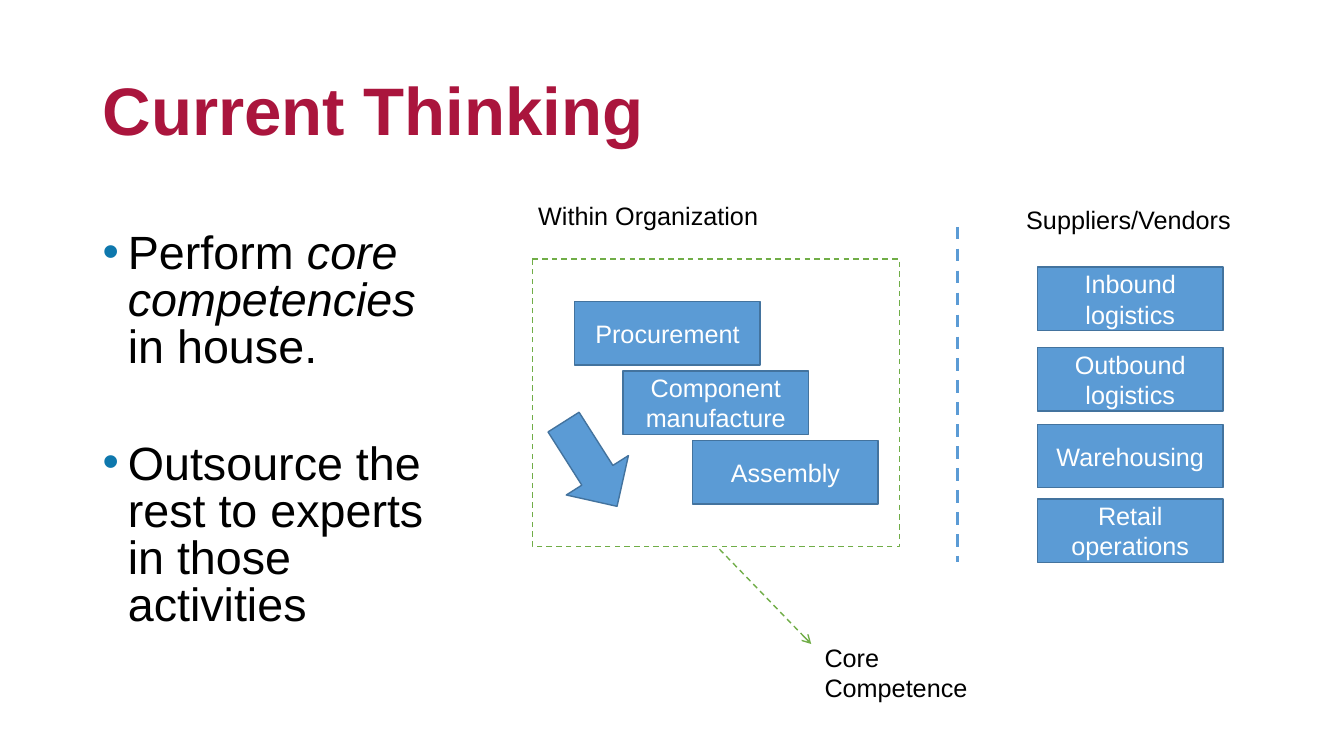
from lxml import etree
from pptx import Presentation
from pptx.dml.color import RGBColor
from pptx.enum.dml import MSO_LINE
from pptx.enum.shapes import MSO_CONNECTOR, MSO_SHAPE
from pptx.enum.text import MSO_ANCHOR, PP_ALIGN
from pptx.oxml.ns import qn
from pptx.util import Emu, Pt

RECT, DOWN_ARROW, CALLOUT = MSO_SHAPE.RECTANGLE, MSO_SHAPE.DOWN_ARROW, MSO_SHAPE.LINE_CALLOUT_1
STRAIGHT, DASH = MSO_CONNECTOR.STRAIGHT, MSO_LINE.DASH
MIDDLE, TOP = MSO_ANCHOR.MIDDLE, MSO_ANCHOR.TOP
CENTER, LEFT = PP_ALIGN.CENTER, PP_ALIGN.LEFT

# Content: lengths in px, 100 px to the inch
PX = 9144
FONT = "Arial"
BLUE, DARK_BLUE, GREEN = "5B9BD5", "43739E", "70AD47"
CRIMSON, BULLET_BLUE, BLACK, WHITE = "AA153D", "0E78AD", "000000", "FFFFFF"

TITLE = "Current Thinking"
POINTS = [  # each point is a list of (text, italic)
    [("Perform ", False), ("core competencies ", True), ("in house.", False)],
    [("Outsource the rest to experts in those activities", False)],
]
POINT_GAP = 50  # points of space between the two bullets
LABELS = [
    ("Within Organization", (524, 194, 284, 40)),
    ("Core Competence", (808, 632, 210, 71)),
    ("Suppliers/Vendors", (1008, 198, 230, 40)),
]
BOX_SIZE = (184, 63)
IN_HOUSE = [("Procurement", 570), ("Component manufacture", 618), ("Assembly", 687)]
IN_HOUSE_TOP, IN_HOUSE_STEP = 299, 69
SUPPLIERS = [("Inbound logistics", 265), ("Outbound logistics", 345),
             ("Warehousing", 421), ("Retail operations", 495)]
SUPPLIERS_LEFT = 1029


def px(*lengths):
    return [Emu(length * PX) for length in lengths]


def color(hex_string):
    return RGBColor.from_string(hex_string)


def style_font(paragraph, size, hex_string, bold=False):
    font = paragraph.font
    font.name, font.size, font.bold = FONT, Pt(size), bold
    font.color.rgb = color(hex_string)


def style_line(line, hex_string, width, dash=None):
    line.color.rgb = color(hex_string)
    line.width = Pt(width)
    if dash:
        line.dash_style = dash


def add_text(text, area, size, hex_string, anchor=TOP, bold=False):
    frame = slide.shapes.add_textbox(*px(*area)).text_frame
    frame.word_wrap = True
    frame.vertical_anchor = anchor
    paragraph = frame.paragraphs[0]
    paragraph.text = text
    paragraph.alignment = LEFT
    style_font(paragraph, size, hex_string, bold)
    return frame


def add_filled(preset, area):
    shape = slide.shapes.add_shape(preset, *px(*area))
    shape.shadow.inherit = False
    shape.fill.solid()
    shape.fill.fore_color.rgb = color(BLUE)
    style_line(shape.line, DARK_BLUE, 1)
    return shape


def add_activity(name, left, top):
    frame = add_filled(RECT, (left, top, *BOX_SIZE)).text_frame
    frame.word_wrap = True
    frame.vertical_anchor = MIDDLE
    paragraph = frame.paragraphs[0]
    paragraph.text = name
    paragraph.alignment = CENTER
    style_font(paragraph, 18, WHITE)


def add_bullet(paragraph):
    properties = paragraph._p.get_or_add_pPr()
    properties.set("marL", str(25 * PX))
    properties.set("indent", str(-25 * PX))
    bullet_color = etree.SubElement(properties, qn("a:buClr"))
    etree.SubElement(bullet_color, qn("a:srgbClr"), val=BULLET_BLUE)
    etree.SubElement(properties, qn("a:buFont"), typeface=FONT)
    etree.SubElement(properties, qn("a:buChar"), char="•")


prs = Presentation()
prs.slide_width, prs.slide_height = px(1333, 750)
slide = prs.slides.add_slide(prs.slide_layouts[6])

# Title
add_text(TITLE, (92, 40, 971, 145), 48, CRIMSON, MIDDLE, True).paragraphs[0].line_spacing = 0.9

# Bullet points
points_frame = slide.shapes.add_textbox(*px(92, 225, 357, 419)).text_frame
points_frame.word_wrap = True
for index, point in enumerate(POINTS):
    paragraph = points_frame.paragraphs[0] if index == 0 else points_frame.add_paragraph()
    paragraph.line_spacing = 0.84
    paragraph.space_before = Pt(POINT_GAP if index else 0)
    add_bullet(paragraph)
    style_font(paragraph, 33.3, BLACK)
    for text, italic in point:
        run = paragraph.add_run()
        run.text = text
        run.font.italic = italic

# Labels
for label, area in LABELS:
    add_text(label, area, 18, BLACK)

# Activities kept in house, stepping down along the arrow
flow_arrow = add_filled(DOWN_ARROW, (549, 411, 73, 99))
flow_arrow.rotation = 327.6
for step, (activity, left) in enumerate(IN_HOUSE):
    add_activity(activity, left, IN_HOUSE_TOP + step * IN_HOUSE_STEP)

# Dashed frame whose callout line points to the core competence label
core_frame = slide.shapes.add_shape(CALLOUT, *px(528, 257, 364, 285))
core_frame.shadow.inherit = False
core_frame.fill.background()
style_line(core_frame.line, GREEN, 1, DASH)
for index, ratio in enumerate((1.01, 0.51, 1.34, 0.76)):
    core_frame.adjustments[index] = ratio
etree.SubElement(core_frame.line._get_or_add_ln(), qn("a:tailEnd"), type="arrow")

# Divider between the organization and its suppliers
divider = slide.shapes.add_connector(STRAIGHT, *px(950, 225, 950, 558))
style_line(divider.line, BLUE, 2.25, DASH)
etree.SubElement(divider._element.spPr, qn("a:effectLst"))

# Activities given to suppliers
for activity, top in SUPPLIERS:
    add_activity(activity, SUPPLIERS_LEFT, top)

prs.save("out.pptx")
